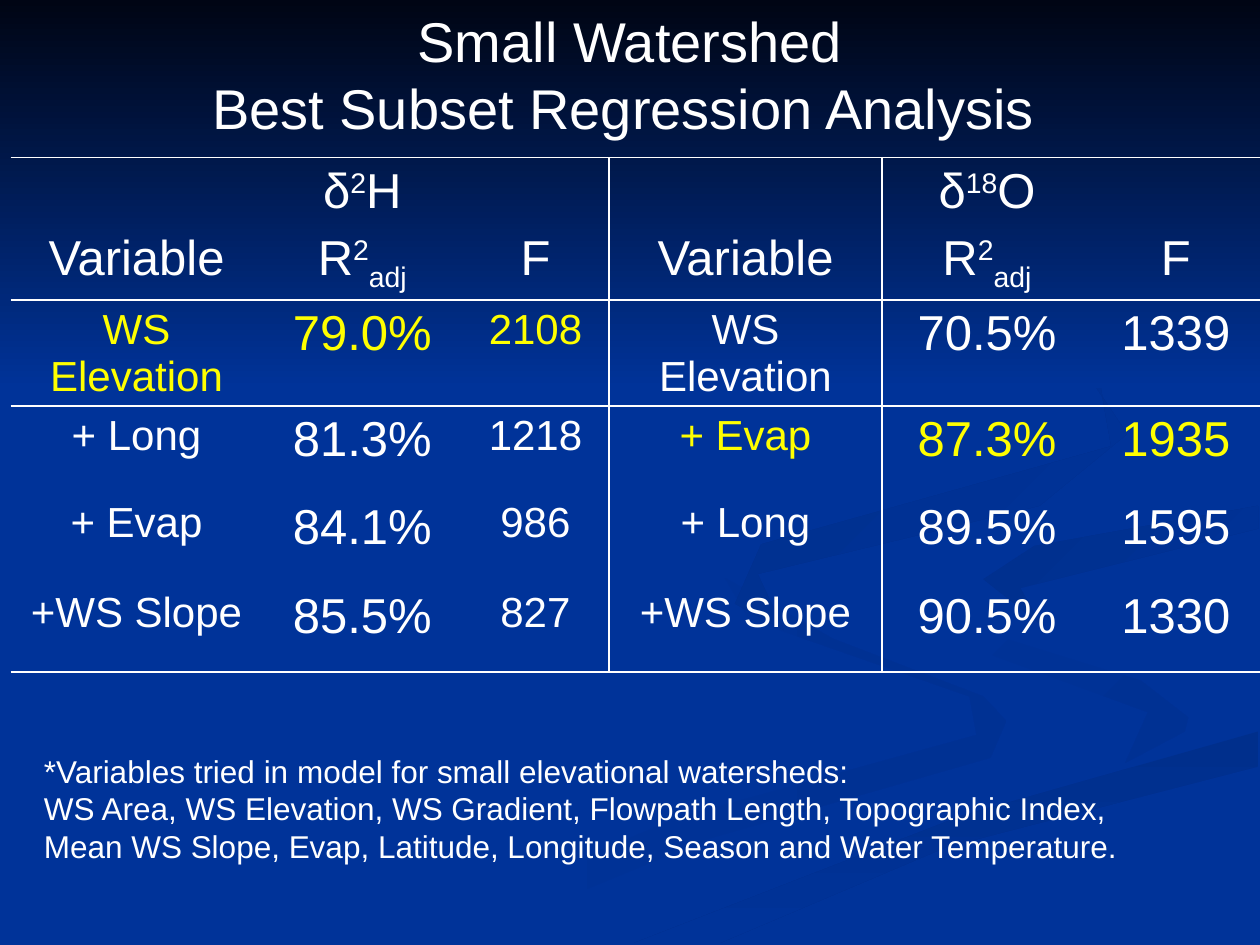
from lxml import etree
from pptx import Presentation
from pptx.dml.color import RGBColor
from pptx.enum.shapes import MSO_SHAPE
from pptx.enum.text import MSO_ANCHOR, PP_ALIGN
from pptx.oxml.ns import qn
from pptx.util import Pt

RECTANGLE = MSO_SHAPE.RECTANGLE
TOP = MSO_ANCHOR.TOP
LEFT, CENTER = PP_ALIGN.LEFT, PP_ALIGN.CENTER
FONT = "Arial"
COLORS = {"background": "003399", "header": "000514", "text": "FFFFFF", "best": "FFFF00",
          "light shade": "003193", "dark shade": "002F8C"}


def color(name):
    return RGBColor.from_string(COLORS[name])


def paint(shape, start, end, angle):
    """Fill a shape with a gradient, its angle running clockwise, and no outline."""
    shape.shadow.inherit = False
    shape.line.fill.background()
    shape.fill.gradient()
    shape.fill.gradient_angle = (360 - angle) % 360
    for stop, name, position in zip(shape.fill.gradient_stops, (start, end), (0, 1)):
        stop.color.rgb = color(name)
        stop.position = position


presentation = Presentation()
presentation.slide_width, presentation.slide_height = Pt(720), Pt(540)
slide = presentation.slides.add_slide(presentation.slide_layouts[5])
slide.background.fill.solid()
slide.background.fill.fore_color.rgb = color("background")

# River ribbons: start colour, end colour, angle, outline in points
ribbons = [
    ("background", "light shade", 0, [
        (562, 398), (476, 365), (414, 330), (428, 354), (554, 398), (558, 420),
        (388, 467), (216, 539), (260, 539), (406, 479), (566, 433), (575, 412)]),
    ("background", "light shade", 45, [
        (679, 410), (652, 389), (536, 353), (521, 334), (552, 369), (656, 407),
        (643, 436), (677, 418)]),
    ("dark shade", "background", 90, [
        (362, 539), (411, 539), (541, 484), (719, 438), (719, 418), (550, 466)]),
    ("dark shade", "background", 45, [
        (562, 331), (595, 357), (583, 336), (719, 302), (719, 289), (591, 312)]),
    ("dark shade", "background", 45, [
        (594, 289), (644, 248), (615, 204), (549, 168), (627, 210), (635, 255),
        (435, 311), (420, 345), (448, 360), (433, 328)]),
]
for start, end, angle, points in ribbons:
    builder = slide.shapes.build_freeform(*points[0], scale=Pt(1))
    builder.add_line_segments(points[1:], close=True)
    paint(builder.convert_to_shape(), start, end, angle)

header_band = slide.shapes.add_shape(RECTANGLE, 0, 0, Pt(720), Pt(222))
paint(header_band, "header", "background", 90)

# Regression table; each cell is a list of (text, baseline in percent)
r_squared = [("R", 0), ("2", 30), ("adj", -25)]
headings = [[("Variable", 0)], r_squared, [("F", 0)]]
results = [
    ["WS Elevation", "79.0%", "2108", "WS Elevation", "70.5%", "1339"],
    ["+ Long", "81.3%", "1218", "+ Evap", "87.3%", "1935"],
    ["+ Evap", "84.1%", "986", "+ Long", "89.5%", "1595"],
    ["+WS Slope", "85.5%", "827", "+WS Slope", "90.5%", "1330"],
]
rows = [
    [[], [("δ", 0), ("2", 30), ("H", 0)], [], [], [("δ", 0), ("18", 30), ("O", 0)], []],
    headings * 2,
] + [[[(text, 0)] for text in result] for result in results]
column_widths = [144, 114, 84, 156, 120, 96]
row_heights = [31, 31, 50, 50, 51, 51]
small_columns = (0, 2, 3)
best_models = {(2, 0), (3, 1)}  # row, half of the table
last_row = len(rows) - 1

table = slide.shapes.add_table(len(rows), len(column_widths), Pt(6), Pt(90),
                               Pt(sum(column_widths)), Pt(sum(row_heights))).table
table.first_row = table.horz_banding = False
no_style = "{2D5ABB26-0587-4C30-8999-92F81FD0307C}"
table._tbl.tblPr.find(qn("a:tableStyleId")).text = no_style
for column, width in zip(table.columns, column_widths):
    column.width = Pt(width)
for row, height in zip(table.rows, row_heights):
    row.height = Pt(height)

for i, row in enumerate(rows):
    for j, runs in enumerate(row):
        cell = table.cell(i, j)
        borders = {"a:lnL": j == 3, "a:lnR": j == 2, "a:lnT": i in (0, 2),
                   "a:lnB": i in (1, last_row)}
        properties = cell._tc.get_or_add_tcPr()
        for tag, visible in borders.items():
            if visible:
                line = etree.SubElement(properties, qn(tag), w=str(Pt(1)))
                fill = etree.SubElement(line, qn("a:solidFill"))
                etree.SubElement(fill, qn("a:srgbClr"), val=COLORS["text"])
        cell.fill.background()
        paragraph = cell.text_frame.paragraphs[0]
        paragraph.alignment = CENTER
        paragraph.font.name = FONT
        paragraph.font.size = Pt(24 if i > 1 and j in small_columns else 28)
        paragraph.font.color.rgb = color("best" if (i, j // 3) in best_models else "text")
        for text, baseline in runs:
            run = paragraph.add_run()
            run.text = text
            if baseline:
                run.font._element.set("baseline", str(baseline * 1000))

title = slide.shapes.title
slide.shapes.element.append(title.element)  # bring in front of the header band
title.left, title.top, title.width, title.height = Pt(114), 0, Pt(492), Pt(85)
note = slide.shapes.add_textbox(Pt(18), Pt(426), Pt(631), Pt(72))
title_lines = ["Small Watershed", "Best Subset Regression Analysis"]
note_lines = [
    "*Variables tried in model for small elevational watersheds:",
    "WS Area, WS Elevation, WS Gradient, Flowpath Length, Topographic Index,",
    "Mean WS Slope, Evap, Latitude, Longitude, Season and Water Temperature.",
]
for shape, lines, size in ((title, title_lines, 32), (note, note_lines, 18)):
    frame = shape.text_frame
    frame.text = "\n".join(lines)
    frame.word_wrap = shape is title
    frame.vertical_anchor = TOP
    for paragraph in frame.paragraphs:
        paragraph.alignment = LEFT
        paragraph.font.name = FONT
        paragraph.font.size = Pt(size)
        paragraph.font.color.rgb = color("text")
title.text_frame.paragraphs[0].alignment = CENTER

presentation.save("out.pptx")
